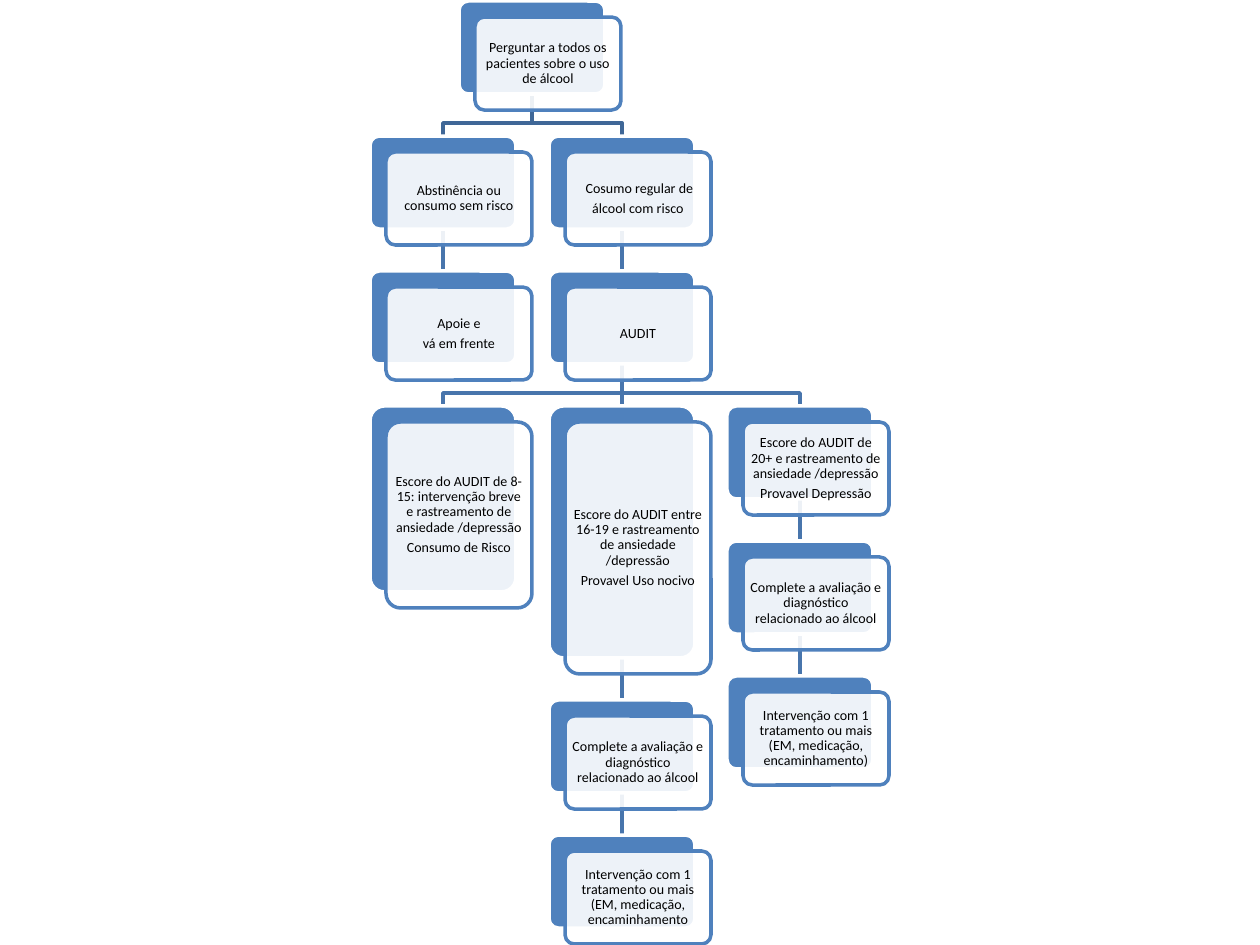
from lxml import etree
from pptx import Presentation
from pptx.dml.color import RGBColor
from pptx.enum.shapes import MSO_CONNECTOR, MSO_SHAPE
from pptx.enum.text import MSO_ANCHOR, PP_ALIGN
from pptx.oxml.ns import qn
from pptx.util import Emu, Pt

ROUNDED = MSO_SHAPE.ROUNDED_RECTANGLE
STRAIGHT = MSO_CONNECTOR.STRAIGHT
MIDDLE = MSO_ANCHOR.MIDDLE
CENTER = PP_ALIGN.CENTER
TOP_SITE, BOTTOM_SITE = 0, 2

BLUE = RGBColor(0x4F, 0x81, 0xBD)
LINK_BLUE = RGBColor(0x48, 0x75, 0xAC)
FIRST_LINK_BLUE = RGBColor(0x3F, 0x67, 0x97)
WHITE = RGBColor(0xFF, 0xFF, 0xFF)
BLACK = RGBColor(0x00, 0x00, 0x00)

EMU_PER_PX = 914400 / 126
LEFT, CENTRE, RIGHT = 370, 549, 727
ROOT_LEFT = (LEFT + CENTRE) // 2
FIRST_TOP = 1
CARD_WIDTH, CARD_HEIGHT = 146, 93
ROW_GAP = 42
CARD_OFFSET = 16
BEND_DROP = 29
TEXT_MARGIN = 4

ASSESS = ["Complete a avaliação e diagnóstico relacionado ao álcool"]
TREAT = "Intervenção com 1 tratamento ou mais (EM, medicação, encaminhamento"

# key: (parent, left, height, paragraphs); a child sits one gap below its parent
STEPS = {
    "ask": (None, ROOT_LEFT, CARD_HEIGHT,
            ["Perguntar a todos os pacientes sobre o uso de álcool"]),
    "low risk": ("ask", LEFT, CARD_HEIGHT, ["Abstinência ou consumo sem risco"]),
    "support": ("low risk", LEFT, CARD_HEIGHT, ["Apoie e", "vá em frente"]),
    "at risk": ("ask", CENTRE, CARD_HEIGHT,
                [" Cosumo regular de", "álcool com risco"]),
    "audit": ("at risk", CENTRE, CARD_HEIGHT, ["AUDIT"]),
    "score 8": ("audit", LEFT, 186,
                ["Escore do AUDIT de 8-15: intervenção breve e rastreamento "
                 "de ansiedade /depressão", "Consumo de Risco"]),
    "score 16": ("audit", CENTRE, 252,
                 ["Escore do AUDIT entre 16-19 e rastreamento de ansiedade "
                  "/depressão", "Provavel Uso nocivo"]),
    "assess 16": ("score 16", CENTRE, CARD_HEIGHT, ASSESS),
    "treat 16": ("assess 16", CENTRE, CARD_HEIGHT, [TREAT]),
    "score 20": ("audit", RIGHT, CARD_HEIGHT,
                 ["Escore do AUDIT de 20+ e rastreamento de ansiedade "
                  "/depressão", "Provavel Depressão"]),
    "assess 20": ("score 20", RIGHT, CARD_HEIGHT, ASSESS),
    "treat 20": ("assess 20", RIGHT, CARD_HEIGHT, [TREAT + ")"]),
}


def px(length):
    return Emu(round(length * EMU_PER_PX))


class FlowSlide:
    """Holds the slide and the style of its cards and links."""

    font_name = "Calibri"
    font_size = Pt(8)
    line_width = Pt(2)

    def __init__(self, slide):
        self.slide = slide

    def card(self, left, top, height, fill_color, line_color):
        shape = self.slide.shapes.add_shape(
            ROUNDED, px(left), px(top), px(CARD_WIDTH), px(height))
        shape.adjustments[0] = 0.1
        shape.shadow.inherit = False
        shape.fill.solid()
        shape.fill.fore_color.rgb = fill_color
        shape.line.color.rgb = line_color
        shape.line.width = self.line_width
        return shape

    def step(self, left, top, height, texts):
        """Draw a solid card with a translucent text card over it; return the solid one."""
        back = self.card(left, top, height, BLUE, WHITE)
        front = self.card(left + CARD_OFFSET, top + CARD_OFFSET, height, WHITE, BLUE)
        color = front.element.spPr.find(qn("a:solidFill")).find(qn("a:srgbClr"))
        etree.SubElement(color, qn("a:alpha"), val="90000")
        self.fill_text(front.text_frame, texts)
        return back

    def fill_text(self, frame, texts):
        frame.word_wrap = True
        frame.vertical_anchor = MIDDLE
        frame.margin_left = frame.margin_right = px(TEXT_MARGIN)
        frame.margin_top = frame.margin_bottom = px(TEXT_MARGIN)
        for index, text in enumerate(texts):
            paragraph = frame.add_paragraph() if index else frame.paragraphs[0]
            paragraph.text = text
            paragraph.alignment = CENTER
            paragraph.line_spacing = 0.9
            paragraph.space_after = Pt(2.8)
            paragraph.font.name = self.font_name
            paragraph.font.size = self.font_size
            paragraph.font.color.rgb = BLACK

    def straight_link(self, parent, child):
        connector = self.slide.shapes.add_connector(STRAIGHT, 0, 0, 0, 0)
        connector.begin_connect(parent, BOTTOM_SITE)
        connector.end_connect(child, TOP_SITE)
        etree.SubElement(connector.element.spPr, qn("a:effectLst"))
        self.finish_link(connector, LINK_BLUE)

    def bent_link(self, start, end, color):
        (start_x, start_y), (end_x, end_y) = start, end
        bend_y = start_y + BEND_DROP
        builder = self.slide.shapes.build_freeform(start_x, start_y, scale=EMU_PER_PX)
        builder.add_line_segments(
            [(start_x, bend_y), (end_x, bend_y), (end_x, end_y)], close=False)
        shape = builder.convert_to_shape()
        shape.fill.background()
        shape.shadow.inherit = False
        self.finish_link(shape, color)

    def finish_link(self, link, color):
        """Style the link and send it behind the cards."""
        link.line.color.rgb = color
        link.line.width = self.line_width
        link.element.getparent().insert(2, link.element)


def main():
    presentation = Presentation()
    presentation.slide_width, presentation.slide_height = px(1260), px(945)
    flow = FlowSlide(presentation.slides.add_slide(presentation.slide_layouts[6]))

    cards, tops, bottoms = {}, {}, {}
    for key, (parent, left, height, texts) in STEPS.items():
        tops[key] = bottoms[parent] + ROW_GAP if parent else FIRST_TOP
        bottoms[key] = tops[key] + height
        cards[key] = flow.step(left, tops[key], height, texts)

    for key, (parent, left, _, _) in STEPS.items():
        if parent is None:
            continue
        parent_left = STEPS[parent][1]
        if parent_left == left:
            flow.straight_link(cards[parent], cards[key])
        else:
            half = CARD_WIDTH // 2
            color = FIRST_LINK_BLUE if parent == "ask" else LINK_BLUE
            flow.bent_link((parent_left + half, bottoms[parent]),
                           (left + half, tops[key]), color)

    presentation.save("out.pptx")


if __name__ == "__main__":
    main()
